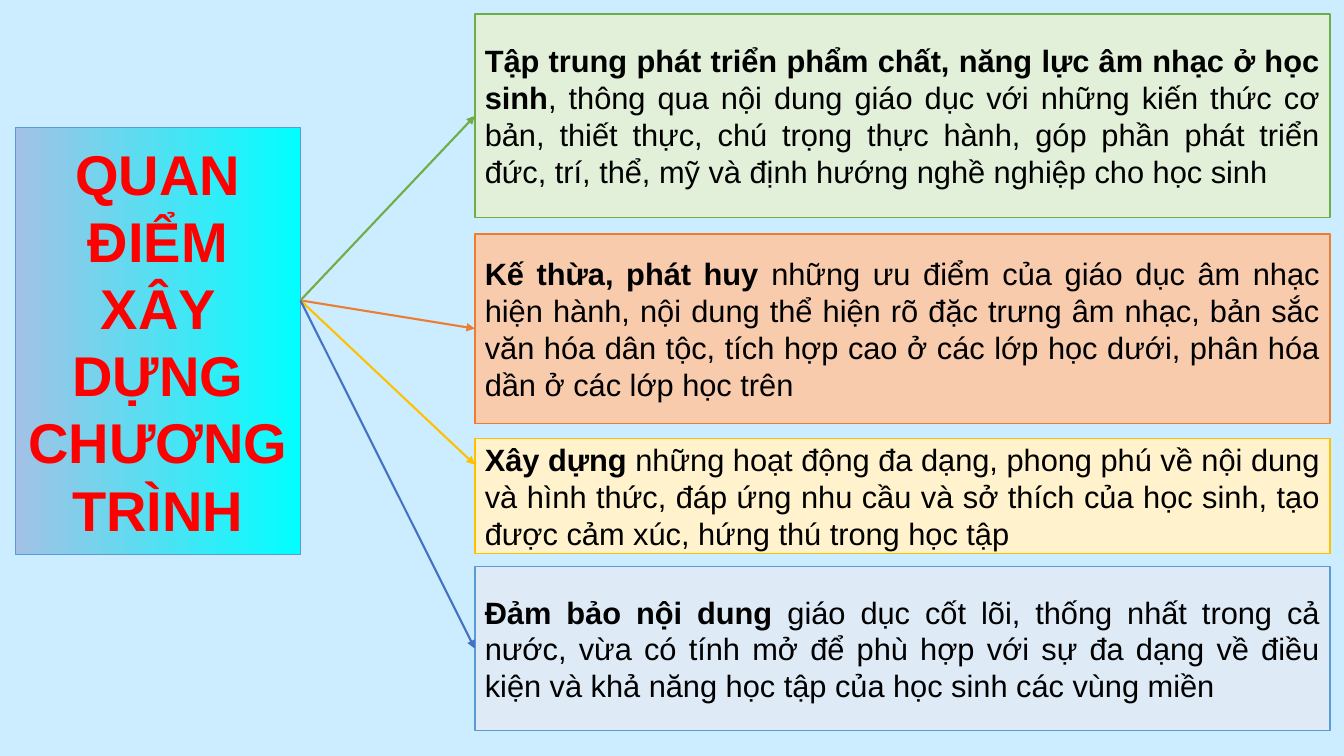
from lxml import etree
from pptx import Presentation
from pptx.dml.color import RGBColor
from pptx.enum.shapes import MSO_CONNECTOR, MSO_SHAPE
from pptx.enum.text import MSO_ANCHOR, MSO_AUTO_SIZE, PP_ALIGN
from pptx.oxml.ns import qn
from pptx.util import Inches, Pt

COLORS = {
    "background": "CCECFF", "title": "FF0000", "text": "000000",
    "title_line": "5B9BD5", "title_left": "A3C1E5", "title_right": "00FFFF",
    "green": "70AD47", "green_fill": "E2F0D9",
    "orange": "ED7D31", "orange_fill": "F8CBAD",
    "gold": "FFC000", "gold_fill": "FFF2CC",
    "blue": "5B9BD5", "blue_fill": "DEEBF7", "blue_arrow": "4472C4",
}
BOX_LEFT, BOX_WIDTH = 4.71, 8.48
ARROW_START = (2.98, 2.98)

# top, height, fill, outline, arrow colour, arrow end (None: middle of the side), bold text, plain text
PRINCIPLES = [
    (0.14, 2.02, "green_fill", "green", "green", None,
     "Tập trung phát triển phẩm chất, năng lực âm nhạc ở học sinh",
     ", thông qua nội dung giáo dục với những kiến thức cơ bản, thiết thực, chú trọng "
     "thực hành, góp phần phát triển đức, trí, thể, mỹ và định hướng nghề nghiệp cho học sinh"),
    (2.32, 1.88, "orange_fill", "orange", "orange", None,
     "Kế thừa, phát huy ",
     "những ưu điểm của giáo dục âm nhạc hiện hành, nội dung thể hiện rõ đặc trưng âm nhạc, "
     "bản sắc văn hóa dân tộc, tích hợp cao ở các lớp học dưới, phân hóa dần ở các lớp học trên"),
    (4.35, 1.14, "gold_fill", "gold", "gold", 4.61,
     "Xây dựng ",
     "những hoạt động đa dạng, phong phú về nội dung và hình thức, đáp ứng nhu cầu và "
     "sở thích của học sinh, tạo được cảm xúc, hứng thú trong học tập"),
    (5.62, 1.63, "blue_fill", "blue", "blue_arrow", None,
     "Đảm bảo nội dung ",
     "giáo dục cốt lõi, thống nhất trong cả nước, vừa có tính mở để phù hợp với sự đa dạng "
     "về điều kiện và khả năng học tập của học sinh các vùng miền"),
]


def color(name):
    return RGBColor.from_string(COLORS[name])


def add_span(para, text, size, color_name, bold):
    span = para.add_run()
    span.text = text
    span.font.name = "Arial"
    span.font.size = Pt(size)
    span.font.bold = bold
    span.font.color.rgb = color(color_name)


deck = Presentation()
deck.slide_width, deck.slide_height = Inches(13.33), Inches(7.5)
page = deck.slides.add_slide(deck.slide_layouts[5])
page.background.fill.solid()
page.background.fill.fore_color.rgb = color("background")

# Title panel
title = page.shapes.title
title.left, title.top = Inches(0.15), Inches(1.26)
title.width, title.height = Inches(2.83), Inches(4.24)
title.fill.gradient()
title.fill.gradient_angle = 0
for stop, name in zip(title.fill.gradient_stops, ("title_left", "title_right")):
    stop.color.rgb = color(name)
title.line.color.rgb = color("title_line")
title.line.width = Pt(0.5)
frame = title.text_frame
frame.word_wrap = True
frame.auto_size = MSO_AUTO_SIZE.NONE
frame.vertical_anchor = MSO_ANCHOR.MIDDLE
for para, text in ((frame.paragraphs[0], "QUAN ĐIỂM"),
                   (frame.add_paragraph(), "XÂY DỰNG CHƯƠNG TRÌNH")):
    para.alignment = PP_ALIGN.CENTER
    add_span(para, text, 40, "title", True)

# Principles, each with its arrow from the title panel
for top, height, fill, outline, arrow_color, arrow_end, lead, detail in PRINCIPLES:
    box = page.shapes.add_shape(MSO_SHAPE.RECTANGLE, Inches(BOX_LEFT), Inches(top),
                                Inches(BOX_WIDTH), Inches(height))
    box.shadow.inherit = False
    box.fill.solid()
    box.fill.fore_color.rgb = color(fill)
    box.line.color.rgb = color(outline)
    box.line.width = Pt(1)
    box.text_frame.word_wrap = True
    box.text_frame.vertical_anchor = MSO_ANCHOR.MIDDLE
    para = box.text_frame.paragraphs[0]
    para.alignment = PP_ALIGN.JUSTIFY
    add_span(para, lead, 22, "text", True)
    add_span(para, detail, 22, "text", False)

    end_y = arrow_end or top + height / 2
    arrow = page.shapes.add_connector(MSO_CONNECTOR.STRAIGHT, Inches(ARROW_START[0]),
                                      Inches(ARROW_START[1]), Inches(BOX_LEFT), Inches(end_y))
    if arrow_end is None:
        arrow.end_connect(box, 1)
    arrow.line.color.rgb = color(arrow_color)
    arrow.line.width = Pt(1.5)
    etree.SubElement(arrow.line._get_or_add_ln(), qn("a:tailEnd"), type="triangle")
    etree.SubElement(arrow._element.spPr, qn("a:effectLst"))

deck.save("out.pptx")
